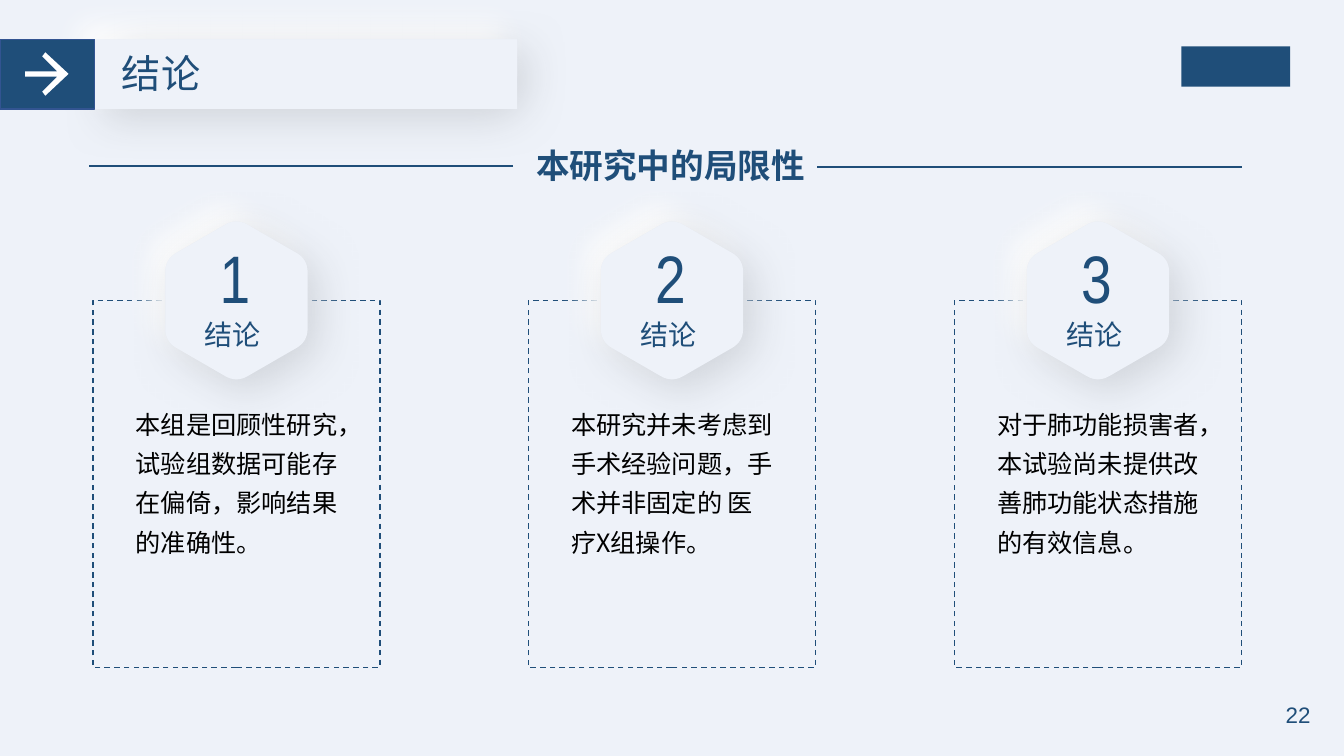
from dataclasses import dataclass
from math import cos, radians, sin
from typing import Any

from lxml import etree
from pptx import Presentation
from pptx.dml.color import RGBColor
from pptx.enum.dml import MSO_LINE_DASH_STYLE
from pptx.enum.shapes import MSO_CONNECTOR, MSO_SHAPE
from pptx.enum.text import MSO_ANCHOR, MSO_AUTO_SIZE, PP_ALIGN
from pptx.oxml.ns import qn
from pptx.util import Pt

RECTANGLE = MSO_SHAPE.RECTANGLE
DIAGONAL_RECTANGLE = MSO_SHAPE.ROUND_2_DIAG_RECTANGLE
STRAIGHT = MSO_CONNECTOR.STRAIGHT
DASH = MSO_LINE_DASH_STYLE.DASH
TOP, MIDDLE = MSO_ANCHOR.TOP, MSO_ANCHOR.MIDDLE
LEFT, RIGHT = PP_ALIGN.LEFT, PP_ALIGN.RIGHT
FIT_SHAPE = MSO_AUTO_SIZE.SHAPE_TO_FIT_TEXT
TITLE_ONLY = 5

Point = tuple[float, float]
Bounds = tuple[float, float, float, float]


@dataclass(frozen=True)
class Theme:
    navy: str = "1F4E79"
    border: str = "325491"
    surface: str = "EEF2F9"
    white: str = "FFFFFF"
    shade: str = "CACED4"
    black: str = "000000"
    latin: str = "Arial"
    narrow: str = "Arial Narrow"
    chinese: str = "Noto Sans CJK SC"
    title: float = 28
    heading: float = 24
    number: float = 48
    label: float = 20
    body: float = 18
    page_number: float = 16


THEME = Theme()


@dataclass(frozen=True)
class Shadow:
    color: str
    opacity: int
    blur: float
    distance: float
    angle: int


GLOW = Shadow(THEME.white, 100, 20, 15, 225)
SHADE = Shadow(THEME.shade, 80, 30, 10, 45)


@dataclass(frozen=True)
class TextStyle:
    size: float
    font: str = THEME.latin
    color: str = THEME.navy
    bold: bool = False
    wrap: bool = False
    spacing: float = 1.0
    align: PP_ALIGN = LEFT
    anchor: MSO_ANCHOR = TOP


TITLE = TextStyle(THEME.title)
HEADING = TextStyle(THEME.heading, bold=True)
NUMBER = TextStyle(THEME.number, THEME.narrow)
LABEL = TextStyle(THEME.label)
BODY = TextStyle(THEME.body, THEME.chinese, THEME.black, wrap=True, spacing=1.3)
PAGE_NUMBER = TextStyle(THEME.page_number, wrap=True, align=RIGHT, anchor=MIDDLE)


@dataclass(frozen=True)
class Card:
    left: float
    number: str
    number_width: float
    body: str


CARDS = (
    Card(66.3, "1", 33.1, "本组是回顾性研究，试验组数据可能存在偏倚，影响结果的准确性。"),
    Card(377.4, "2", 38.9, "本研究并未考虑到手术经验问题，手术并非固定的 医疗X组操作。"),
    Card(681.7, "3", 40.3, "对于肺功能损害者，本试验尚未提供改善肺功能状态措施的有效信息。"),
)
CARD_TOP, CARD_WIDTH, CARD_HEIGHT = 214.6, 205.2, 262.1
HEXAGON_RADIUS, CORNER_SHARE, CORNER_STEPS = 58.7, 0.157, 8
PANEL: Bounds = (67.7, 28.1, 301.7, 49.7)
ARROW: tuple[Point, ...] = (
    (41, 54.7), (30.2, 65.5), (32.4, 68.4), (49, 52.8), (32.4, 37.4),
    (30.2, 40.3), (41, 51.1), (18, 51.1), (18, 54.7),
)
HEADING_RULES = ((366.5, 63.4, 118.8), (887, 583.9, 119.5))


def set_values(target: Any, values: dict[str, Any]) -> None:
    for name, value in values.items():
        setattr(target, name, value)


def add_shadow(shape: Any, shadow: Shadow) -> None:
    effects = shape._element.spPr.find(qn("a:effectLst"))
    outer = etree.SubElement(
        effects, qn("a:outerShdw"), blurRad=str(Pt(shadow.blur)),
        dist=str(Pt(shadow.distance)), dir=str(shadow.angle * 60000),
        algn="ctr", rotWithShape="0",
    )
    color = etree.SubElement(outer, qn("a:srgbClr"), val=shadow.color)
    etree.SubElement(color, qn("a:alpha"), val=str(shadow.opacity * 1000))


def paint(shape: Any, fill: str | None, line: str | None = None,
          shadow: Shadow | None = None) -> None:
    if fill:
        shape.fill.solid()
        shape.fill.fore_color.rgb = RGBColor.from_string(fill)
    else:
        shape.fill.background()
    if line:
        shape.line.color.rgb = RGBColor.from_string(line)
        shape.line.width = Pt(1)
    else:
        shape.line.fill.background()
    shape.shadow.inherit = False
    if shadow:
        add_shadow(shape, shadow)


def add_box(shapes: Any, bounds: Bounds, kind: MSO_SHAPE = RECTANGLE) -> Any:
    return shapes.add_shape(kind, *map(Pt, bounds))


def add_outline(shapes: Any, points: tuple[Point, ...] | list[Point]) -> Any:
    corners = [(Pt(x), Pt(y)) for x, y in points]
    builder = shapes.build_freeform(*corners[0])
    builder.add_line_segments(corners[1:], close=True)
    return builder.convert_to_shape()


def write(box: Any, text: str, style: TextStyle) -> None:
    frame = box.text_frame
    set_values(frame, {"word_wrap": style.wrap, "auto_size": FIT_SHAPE,
                       "vertical_anchor": style.anchor})
    para = frame.paragraphs[0]
    set_values(para, {"alignment": style.align, "line_spacing": style.spacing})
    span = para.add_run()
    span.text = text
    set_values(span.font, {"size": Pt(style.size), "name": style.font, "bold": style.bold})
    span.font.color.rgb = RGBColor.from_string(style.color)
    etree.SubElement(span.font._element, qn("a:ea"), typeface=THEME.chinese)


def add_text(shapes: Any, bounds: Bounds, text: str, style: TextStyle) -> None:
    write(shapes.add_textbox(*map(Pt, bounds)), text, style)


def mix(start: Point, end: Point, share: float) -> Point:
    return (start[0] + (end[0] - start[0]) * share, start[1] + (end[1] - start[1]) * share)


def rounded_hexagon(center: Point) -> list[Point]:
    """Round each corner of a regular hexagon with a quadratic curve."""
    corners = [(center[0] + HEXAGON_RADIUS * sin(radians(angle)),
                center[1] - HEXAGON_RADIUS * cos(radians(angle)))
               for angle in range(0, 360, 60)]
    points = []
    for index, corner in enumerate(corners):
        start = mix(corner, corners[index - 1], CORNER_SHARE)
        end = mix(corner, corners[(index + 1) % 6], CORNER_SHARE)
        for step in range(CORNER_STEPS + 1):
            share = step / CORNER_STEPS
            points.append(mix(mix(start, corner, share), mix(corner, end, share), share))
    return points


def add_header(page: Any) -> None:
    group = page.shapes.add_group_shape().shapes
    for rounding, shadow in ((0, GLOW), (0.5, SHADE), (0, None)):
        panel = add_box(group, PANEL, DIAGONAL_RECTANGLE)
        panel.adjustments[0] = rounding
        paint(panel, THEME.surface, shadow=shadow)
    paint(add_box(page.shapes, (0, 28.1, 67.7, 49.7)), THEME.navy, THEME.border)
    paint(add_outline(page.shapes, ARROW), THEME.white)
    paint(add_box(page.shapes, (843.8, 33.1, 77.8, 28.8)), THEME.navy)
    title = page.shapes.title
    set_values(title, dict(zip(("left", "top", "width", "height"),
                               map(Pt, (79.9, 31.7, 71.3, 41)))))
    write(title, "结论", TITLE)
    page.shapes.element.append(title.element)


def add_heading(page: Any) -> None:
    group = page.shapes.add_group_shape().shapes
    add_text(group, (375.8, 100.1, 208.1, 36), "本研究中的局限性", HEADING)
    for start, end, top in HEADING_RULES:
        rule = group.add_connector(STRAIGHT, Pt(start), Pt(top), Pt(end), Pt(top))
        rule.line.color.rgb = RGBColor.from_string(THEME.navy)
        rule.line.width = Pt(1.25)
        etree.SubElement(rule._element.spPr, qn("a:effectLst"))


def add_card(page: Any, card: Card) -> None:
    group = page.shapes.add_group_shape().shapes
    border = add_box(group, (card.left, CARD_TOP, CARD_WIDTH, CARD_HEIGHT))
    paint(border, None, THEME.navy)
    border.line.dash_style = DASH
    hexagon = rounded_hexagon((card.left + CARD_WIDTH / 2, CARD_TOP))
    for shadow in (GLOW, SHADE):
        paint(add_outline(group, hexagon), THEME.surface, shadow=shadow)
    add_text(group, (card.left + 83.5, 165.6, card.number_width, 65.5), card.number, NUMBER)
    add_text(group, (card.left + 72.7, 223.2, 54.7, 31.7), "结论", LABEL)
    add_text(group, (card.left + 23.5, 282.2, 158.4, 118.1), card.body, BODY)


def main() -> None:
    deck = Presentation()
    set_values(deck, {"slide_width": Pt(960), "slide_height": Pt(540)})
    page = deck.slides.add_slide(deck.slide_layouts[TITLE_ONLY])
    page.background.fill.solid()
    page.background.fill.fore_color.rgb = RGBColor.from_string(THEME.surface)
    add_header(page)
    add_heading(page)
    for card in CARDS:
        add_card(page, card)
    add_text(page.shapes, (898.6, 496.1, 44.6, 28.8), "22", PAGE_NUMBER)
    deck.save("out.pptx")


if __name__ == "__main__":
    main()
